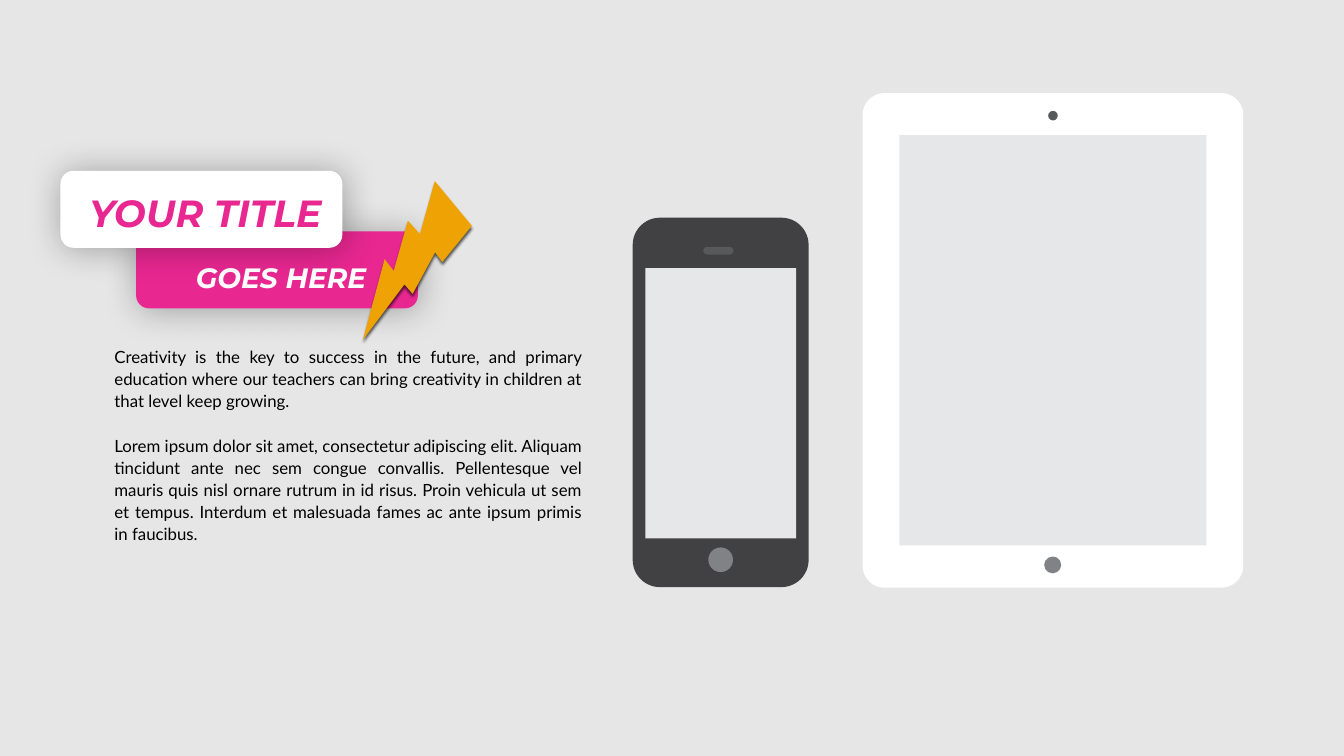
from lxml.etree import SubElement
from pptx import Presentation
from pptx.dml.color import RGBColor
from pptx.enum.shapes import MSO_SHAPE
from pptx.enum.text import MSO_ANCHOR, MSO_AUTO_SIZE, PP_ALIGN
from pptx.oxml.ns import qn
from pptx.util import Pt

PINK, WHITE, BLACK = "E82791", "FFFFFF", "000000"
SCREEN, BUTTON, DETAIL = "E6E7E8", "808285", "58595B"
BODY = [
    "Creativity is the key to success in the future, and primary education where our "
    "teachers can bring creativity in children at that level keep growing.",
    "Lorem ipsum dolor sit amet, consectetur adipiscing elit. Aliquam tincidunt ante nec "
    "sem congue convallis. Pellentesque vel mauris quis nisl ornare rutrum in id risus. "
    "Proin vehicula ut sem et tempus. Interdum et malesuada fames ac ante ipsum primis "
    "in faucibus.",
]


def rgb(color):
    return RGBColor.from_string(color)


def add_shape(s, kind, x, y, w, h, color, radius=None):
    """Add a borderless filled shape; radius is the corner size in points."""
    sp = s.shapes.add_shape(kind, Pt(x), Pt(y), Pt(w), Pt(h))
    sp.shadow.inherit = False
    sp.fill.solid()
    sp.fill.fore_color.rgb = rgb(color)
    sp.line.fill.background()
    if radius is not None:
        sp.adjustments[0] = radius / min(w, h)
    return sp


def add_shadow(sp, alpha, blur, dist, angle):
    """Give a shape a black outer shadow; alpha in percent."""
    effects = sp.element.spPr.find(qn("a:effectLst"))
    shadow = SubElement(effects, qn("a:outerShdw"), blurRad=str(Pt(blur)),
                        dist=str(Pt(dist)), dir=str(angle * 60000),
                        algn="ctr", rotWithShape="0")
    color = SubElement(shadow, qn("a:srgbClr"), val=BLACK)
    SubElement(color, qn("a:alpha"), val=str(alpha * 1000))


def write_text(sp, paragraphs, size, font, color, bold=False, italic=False,
               align=PP_ALIGN.CENTER, spacing=1.0, gap=0, inset=(7.2, 3.6)):
    """Fill a text box or placeholder with equally formatted paragraphs."""
    tf = sp.text_frame
    tf.word_wrap = True
    tf.auto_size = MSO_AUTO_SIZE.NONE
    tf.vertical_anchor = MSO_ANCHOR.TOP
    tf.margin_left = tf.margin_right = Pt(inset[0])
    tf.margin_top = tf.margin_bottom = Pt(inset[1])
    for i, text in enumerate(paragraphs):
        p = tf.paragraphs[0] if i == 0 else tf.add_paragraph()
        p.alignment = align
        p.line_spacing = spacing
        p.space_before = Pt(gap if i else 0)
        r = p.add_run()
        r.text = text
        r.font.size = Pt(size)
        r.font.name = font
        r.font.bold = bold
        r.font.italic = italic
        r.font.color.rgb = rgb(color)


def add_text(s, x, y, w, h, paragraphs, **fmt):
    sp = s.shapes.add_textbox(Pt(x), Pt(y), Pt(w), Pt(h))
    write_text(sp, paragraphs, **fmt)


def add_title(s, x, y, w, h, text, **fmt):
    """Place the title placeholder in front of what is already drawn."""
    sp = s.shapes.title
    sp.left, sp.top, sp.width, sp.height = Pt(x), Pt(y), Pt(w), Pt(h)
    s.shapes.element.append(sp.element)
    write_text(sp, [text], **fmt)


def add_banner(s, x, y, color):
    sp = add_shape(s, MSO_SHAPE.ROUNDED_RECTANGLE, x, y, 402.5, 110, color, 18.4)
    add_shadow(sp, 31, 50.4, 3, 45)


def add_tablet(s):
    add_shape(s, MSO_SHAPE.ROUNDED_RECTANGLE, 1232, 133, 543.6, 706.5, WHITE, 31.3)
    add_shape(s, MSO_SHAPE.RECTANGLE, 1284.5, 193, 438.5, 586, SCREEN)
    add_shape(s, MSO_SHAPE.OVAL, 1497, 158.4, 13.7, 13.7, DETAIL)
    add_shape(s, MSO_SHAPE.OVAL, 1491.3, 795, 24.3, 24, BUTTON)


def add_phone(s):
    add_shape(s, MSO_SHAPE.ROUNDED_RECTANGLE, 903.6, 311, 251.3, 527.8, "414042", 38.9)
    add_shape(s, MSO_SHAPE.RECTANGLE, 921.6, 383, 215.3, 386, SCREEN)
    add_shape(s, MSO_SHAPE.OVAL, 1011.6, 782, 35.3, 35.3, BUTTON)
    add_shape(s, MSO_SHAPE.ROUNDED_RECTANGLE, 1004.4, 352.8, 43.2, 10.8, DETAIL, 5.4)


def main():
    prs = Presentation()
    prs.slide_width, prs.slide_height = Pt(1919.52), Pt(1080)
    s = prs.slides.add_slide(prs.slide_layouts[5])
    s.background.fill.solid()
    s.background.fill.fore_color.rgb = rgb("E7E6E6")

    # Devices
    add_tablet(s)
    add_phone(s)

    # Body text
    add_text(s, 149, 485.3, 696.2, 299.5, BODY, size=24, font="Lato", color=BLACK,
             align=PP_ALIGN.JUSTIFY, spacing=1.1, gap=31.7, inset=(14.4, 7.2))

    # Title banners
    heading = dict(font="Montserrat", bold=True, italic=True)
    add_banner(s, 194.4, 330.5, PINK)
    add_text(s, 212.4, 368, 378, 55.4, ["GOES HERE"], size=40, color=WHITE, **heading)
    add_banner(s, 86.4, 244, WHITE)
    add_title(s, 104.4, 267.8, 378, 72.7, "YOUR TITLE", size=54, color=PINK, **heading)

    # Lightning bolt
    bolt = add_shape(s, MSO_SHAPE.LIGHTNING_BOLT, 490.3, 271.4, 192.2, 192.2, "EFA203")
    bolt.rotation = 75
    add_shadow(bolt, 64, 4, 4, 90)

    prs.save("out.pptx")


if __name__ == "__main__":
    main()
